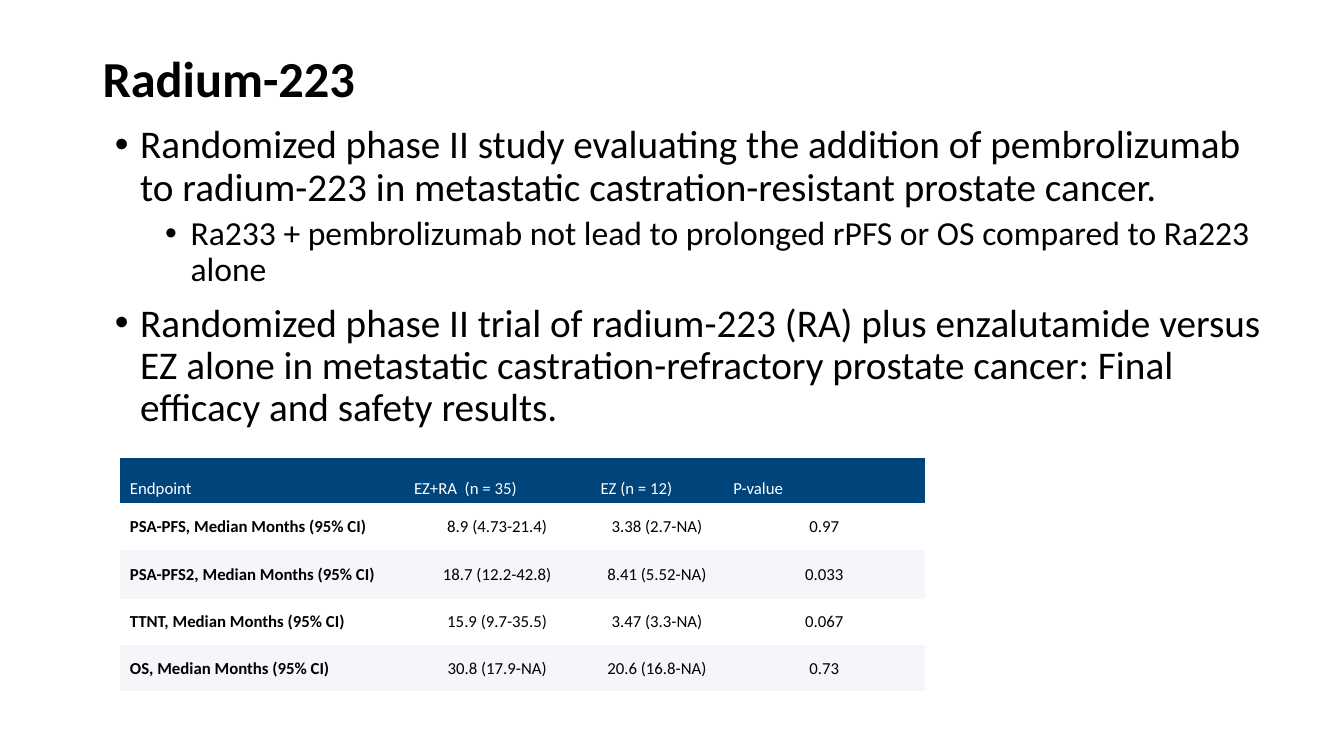
from lxml.etree import SubElement
from pptx import Presentation
from pptx.dml.color import RGBColor
from pptx.enum.text import MSO_ANCHOR as ANCHOR, MSO_AUTO_SIZE as AUTO, PP_ALIGN as ALIGN
from pptx.oxml import parse_xml
from pptx.oxml.ns import nsdecls, qn
from pptx.util import Cm, Pt


def rgb(value):
    return RGBColor.from_string(value)


def add_run(p, text, size, color="000000", bold=False):
    r = p.add_run()
    r.text = text
    r.font.name = "Calibri"
    r.font.size = Pt(size)
    r.font.bold = bold
    r.font.color.rgb = rgb(color)


prs = Presentation()
prs.slide_width, prs.slide_height = Cm(33.87), Cm(19.05)
s = prs.slides.add_slide(prs.slide_layouts[1])
title, body = s.placeholders

title.left, title.top, title.width, title.height = Cm(2.33), Cm(1.04), Cm(29.21), Cm(2)
tf = title.text_frame
tf.auto_size = AUTO.NONE
tf.vertical_anchor = ANCHOR.MIDDLE
p = tf.paragraphs[0]
p.alignment = ALIGN.LEFT
p.line_spacing = 0.9
add_run(p, "Radium-223", 36, bold=True)

body.left, body.top, body.width, body.height = Cm(2.64), Cm(3.02), Cm(29.9), Cm(15.01)
tf = body.text_frame
tf.auto_size = AUTO.NONE
tf.vertical_anchor = ANCHOR.TOP
points = [
    (0, "Randomized phase II study evaluating the addition of pembrolizumab to radium-223 "
        "in metastatic castration-resistant prostate cancer."),
    (1, "Ra233 + pembrolizumab not lead to prolonged rPFS or OS compared to Ra223 alone"),
    (0, "Randomized phase II trial of radium-223 (RA) plus enzalutamide versus EZ alone in "
        "metastatic castration-refractory prostate cancer: Final efficacy and safety results."),
]
for i, (level, text) in enumerate(points):
    p = tf.add_paragraph() if i else tf.paragraphs[0]
    p.level = level
    p.line_spacing = 0.9
    p.space_before = Pt(5 if level else 10)
    add_run(p, text, 24 if level else 28)
    pPr = p._p.get_or_add_pPr()
    pPr.set("marL", str(Cm(0.64 + 1.27 * level)))
    pPr.set("indent", str(Cm(-0.64)))
    SubElement(pPr, qn("a:buFont"), typeface="Arial")
    SubElement(pPr, qn("a:buChar"), char="•")

rows = [
    ("Endpoint", "EZ+RA  (n = 35)", "EZ (n = 12)", "P-value"),
    ("PSA-PFS, Median Months (95% CI)", "8.9 (4.73-21.4)", "3.38 (2.7-NA)", "0.97"),
    ("PSA-PFS2, Median Months (95% CI)", "18.7 (12.2-42.8)", "8.41 (5.52-NA)", "0.033"),
    ("TTNT, Median Months (95% CI)", "15.9 (9.7-35.5)", "3.47 (3.3-NA)", "0.067"),
    ("OS, Median Months (95% CI)", "30.8 (17.9-NA)", "20.6 (16.8-NA)", "0.73"),
]
widths = [7.16, 4.7, 3.35, 5.08]
heights = [1.16, 1.16, 1.25, 1.16, 1.16]
frame = s.shapes.add_table(len(rows), len(widths), Cm(3.02), Cm(11.53), Cm(sum(widths)), Cm(sum(heights)))
table = frame.table
table._tbl.tblPr.find(qn("a:tableStyleId")).text = "{2D5ABB26-0587-4C30-8999-92F81FD0307C}"
table.horz_banding = False
for column, width in zip(table.columns, widths):
    column.width = Cm(width)
for i, (row, height, texts) in enumerate(zip(table.rows, heights, rows)):
    row.height = Cm(height)
    header = i == 0
    for j, (cell, text) in enumerate(zip(row.cells, texts)):
        cell.vertical_anchor = ANCHOR.BOTTOM if header else ANCHOR.MIDDLE
        p = cell.text_frame.paragraphs[0]
        p.alignment = ALIGN.LEFT if header or j == 0 else ALIGN.CENTER
        add_run(p, text, 12, "FFFFFF" if header else "000000", not header and j == 0)
        if i % 2:
            cell.fill.background()
        else:
            cell.fill.solid()
            cell.fill.fore_color.rgb = rgb("00447C" if header else "F6F5F9")
        if header:
            cell._tc.get_or_add_tcPr().insert(0, parse_xml(
                f'<a:lnB {nsdecls("a")} w="{Pt(0.75)}"><a:solidFill>'
                '<a:srgbClr val="FFFFFF"/></a:solidFill></a:lnB>'))

prs.save("out.pptx")
